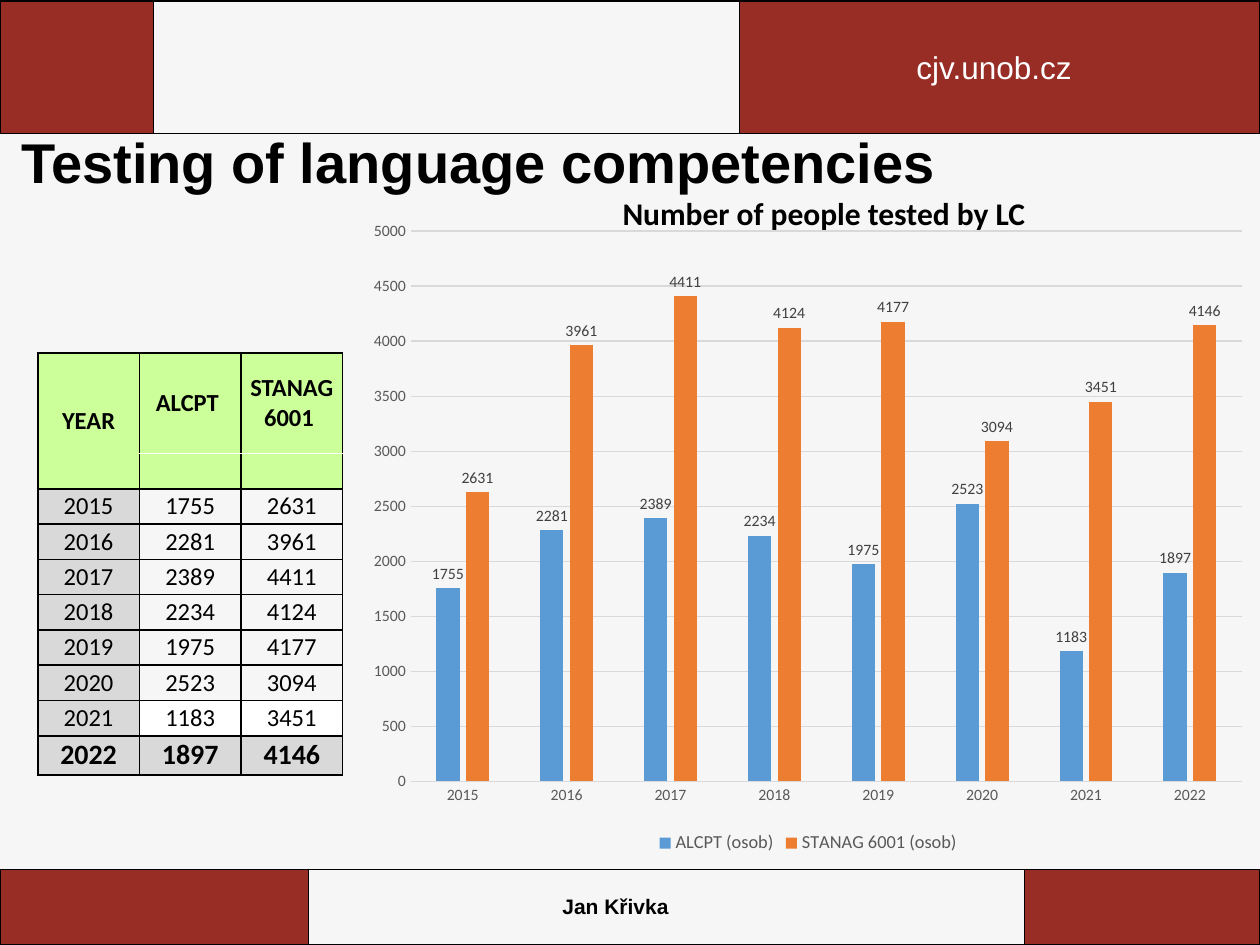
from dataclasses import dataclass
from lxml import etree
from pptx import Presentation
from pptx.chart.data import CategoryChartData as ChartData
from pptx.dml.color import RGBColor as RGB
from pptx.enum.chart import XL_CHART_TYPE as Kind, XL_LABEL_POSITION as Spot
from pptx.enum.chart import XL_LEGEND_POSITION as Side, XL_TICK_MARK as Tick
from pptx.enum.text import MSO_ANCHOR as Anchor, PP_ALIGN as Align
from pptx.oxml import parse_xml
from pptx.oxml.ns import nsdecls, qn
from pptx.util import Inches, Pt


@dataclass(frozen=True)
class Theme:
    back: str = "F6F6F6"
    brand: str = "982D26"
    ink: str = "000000"
    white: str = "FFFFFF"
    head: str = "CCFF99"
    shade: str = "D9D9D9"
    soft: str = "595959"
    label: str = "404040"
    blue: str = "5B9BD5"
    orange: str = "ED7D31"
    sans: str = "Arial"
    body: str = "Calibri"
    title: float = 32
    large: float = 18
    total: float = 16
    cell: float = 14
    small: float = 12
    legend: float = 10.5
    chart: float = 10
    tick: float = 9


T = Theme()
YEARS = [str(year) for year in range(2015, 2023)]
ALCPT = [1755, 2281, 2389, 2234, 1975, 2523, 1183, 1897]
STANAG = [2631, 3961, 4411, 4124, 4177, 3094, 3451, 4146]


def style(font, size, color=T.ink, bold=False, name=T.body):
    font.size, font.bold, font.name = Pt(size), bold, name
    font.color.rgb = RGB.from_string(color)


def paint(fill, color):
    if color:
        fill.solid()
        fill.fore_color.rgb = RGB.from_string(color)
    else:
        fill.background()


def edge(cell, sides="LRTB"):
    props = cell._tc.get_or_add_tcPr()
    for spot, side in enumerate(sides):
        line = etree.Element(qn(f"a:ln{side}"), w=str(Pt(1)))
        fill = etree.SubElement(line, qn("a:solidFill"))
        etree.SubElement(fill, qn("a:srgbClr"), val=T.ink)
        props.insert(spot, line)


def add_text(slide, box, text, size, color=T.ink, bold=True, name=T.sans,
             align=Align.CENTER, anchor=Anchor.TOP, space=1.0):
    frame = slide.shapes.add_textbox(*map(Inches, box)).text_frame
    frame.word_wrap = True
    frame.vertical_anchor = anchor
    para = frame.paragraphs[0]
    para.text, para.alignment, para.line_spacing = text, align, space
    style(para.font, size, color, bold, name)


def add_grid(slide, box, cols, rows):
    shape = slide.shapes.add_table(len(rows), len(cols), *map(Inches, box))
    table = shape.table
    table.first_row = table.horz_banding = False
    for col, width in zip(table.columns, cols):
        col.width = Inches(width)
    for row, height in zip(table.rows, rows):
        row.height = Inches(height)
    return table


def add_band(slide, box, cols):
    table = add_grid(slide, box, cols, [box[3]])
    for cell, color in zip(table.rows[0].cells, (T.brand, None, T.brand)):
        paint(cell.fill, color)
        edge(cell)


def fill_cell(cell, text, color, size=T.cell, bold=False, sides="LRTB"):
    cell.margin_left = cell.margin_right = 0
    cell.margin_top = cell.margin_bottom = 0
    cell.vertical_anchor = Anchor.MIDDLE
    para = cell.text_frame.paragraphs[0]
    para.text, para.alignment = text, Align.CENTER
    style(para.font, size, bold=bold)
    paint(cell.fill, color)
    edge(cell, sides)


def add_scores(slide, box):
    rows = [0.8] + [0.28] * 8 + [0.31]
    table = add_grid(slide, box, [box[2] / 3] * 3, rows)
    for col, text in enumerate(("YEAR", "ALCPT ", "STANAG 6001 ")):
        fill_cell(table.cell(0, col), text, T.head, bold=True,
                  sides="LRT" if col else "LRTB")
        fill_cell(table.cell(1, col), "", T.head,
                  sides="LRB" if col else "LRTB")
    table.cell(0, 0).merge(table.cell(1, 0))
    for row, values in enumerate(zip(YEARS, ALCPT, STANAG), 2):
        last = values[0] == "2022"
        plain = T.white if values[0] == "2021" else None
        for col, value in enumerate(values):
            color = T.shade if last or col == 0 else plain
            fill_cell(table.cell(row, col), str(value), color,
                      T.total if last else T.cell, last)


def set_line(line, color):
    line.color.rgb = RGB.from_string(color)
    line.width = Pt(0.75)


def add_bars(slide, box):
    data = ChartData()
    data.categories = YEARS
    data.add_series("ALCPT (osob)", ALCPT)
    data.add_series("STANAG 6001 (osob)", STANAG)
    chart = slide.shapes.add_chart(
        Kind.COLUMN_CLUSTERED, *map(Inches, box), data).chart
    chart.has_title = False
    style(chart.font, T.chart)
    chart.has_legend = True
    chart.legend.position = Side.BOTTOM
    chart.legend.include_in_layout = False
    style(chart.legend.font, T.legend, T.soft)
    for axis in (chart.category_axis, chart.value_axis):
        axis.major_tick_mark = axis.minor_tick_mark = Tick.NONE
        style(axis.tick_labels.font, T.tick, T.soft)
    set_line(chart.category_axis.format.line, T.shade)
    scale = chart.value_axis
    scale.minimum_scale, scale.maximum_scale, scale.major_unit = 0, 5000, 500
    scale.format.line.fill.background()
    set_line(scale.major_gridlines.format.line, T.shade)
    plot = chart.plots[0]
    plot.gap_width, plot.overlap, plot.vary_by_categories = 219, -27, False
    for bars, color in zip(plot.series, (T.blue, T.orange)):
        paint(bars.format.fill, color)
        labels = bars.data_labels
        labels.show_value = True
        labels.position = Spot.OUTSIDE_END
        style(labels.font, T.tick, T.label)
    place_plot(chart, x=0.06, y=0.03, w=0.92, h=0.85)


def place_plot(chart, **parts):
    area = chart._chartSpace.chart.plotArea
    for old in area.findall(qn("c:layout")):
        area.remove(old)
    sizes = "".join(f'<c:{key} val="{val}"/>' for key, val in parts.items())
    area.insert(0, parse_xml(
        f'<c:layout {nsdecls("c")}><c:manualLayout>'
        '<c:layoutTarget val="inner"/><c:xMode val="edge"/>'
        f'<c:yMode val="edge"/>{sizes}</c:manualLayout></c:layout>'))


def add_header(slide, box):
    left, top, width, height = box
    add_band(slide, box, [1.22, 4.65, 4.13])
    add_text(slide, (left + 6.81, top + 0.32, 2.16, 0.4), "cjv.unob.cz",
             T.large, T.white, False)


def add_footer(slide, box):
    left, top, width, height = box
    add_band(slide, box, [2.45, 5.68, 1.87])
    add_text(slide, (left + 2.12, top + 0.1, 5.53, 0.41), "Jan Křivka",
             T.small, anchor=Anchor.MIDDLE, space=0.9)


def main():
    deck = Presentation()
    deck.slide_width, deck.slide_height = Inches(10), Inches(7.5)
    slide = deck.slides.add_slide(deck.slide_layouts[6])
    paint(slide.background.fill, T.back)
    add_header(slide, (0, 0.01, 10, 1.05))
    add_footer(slide, (0, 6.9, 10, 0.6))
    add_text(slide, (0.07, 0.86, 9.74, 0.74),
             "Testing of language competencies", T.title,
             align=Align.LEFT, anchor=Anchor.BOTTOM, space=0.9)
    add_bars(slide, (2.83, 1.68, 7.17, 5.14))
    add_text(slide, (4.05, 1.49, 4.98, 0.4),
             "Number of people tested by LC", T.large, name=T.body)
    add_scores(slide, (0.3, 2.8, 2.42, 3.33))
    deck.save("out.pptx")


if __name__ == "__main__":
    main()
